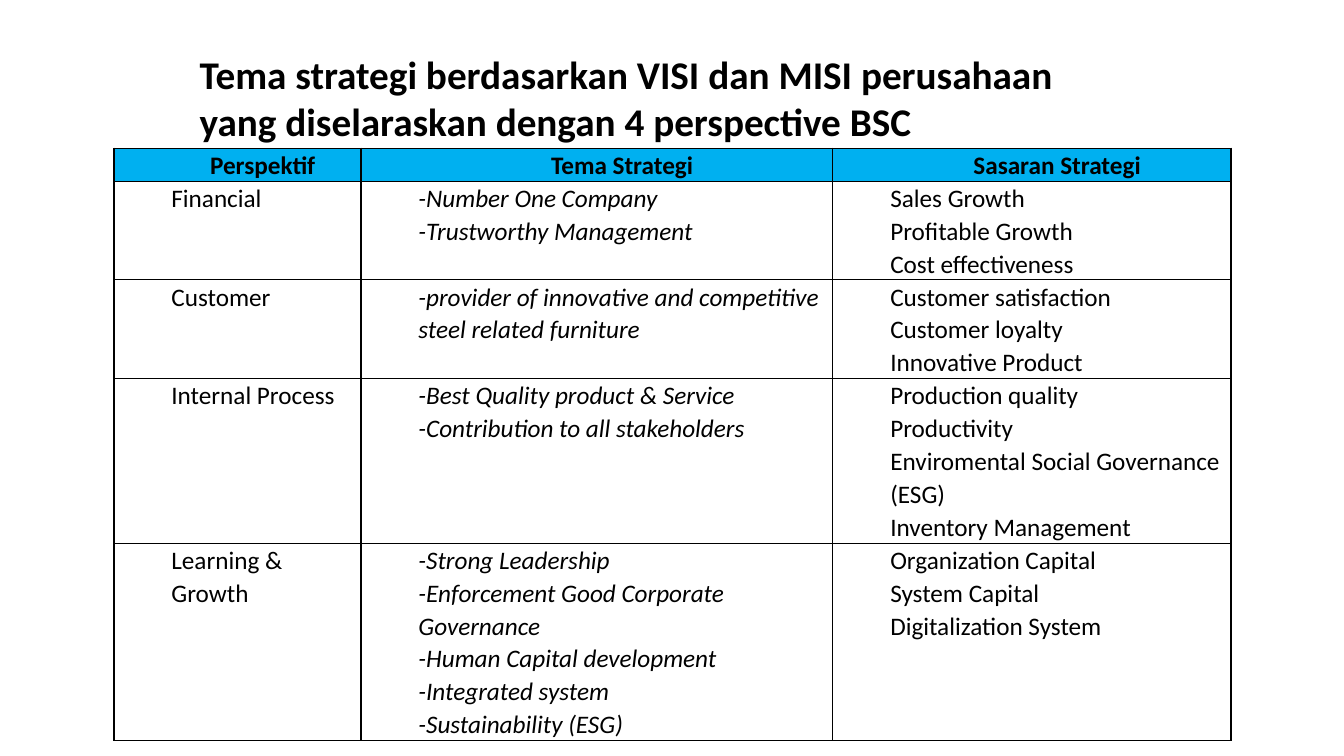
from dataclasses import dataclass

from pptx import Presentation
from pptx.dml.color import RGBColor
from pptx.enum.text import MSO_ANCHOR, MSO_AUTO_SIZE, PP_ALIGN
from pptx.oxml.xmlchemy import OxmlElement
from pptx.slide import Slide
from pptx.table import _Cell
from pptx.text.text import TextFrame
from pptx.util import Inches, Pt

LEFT, CENTER = PP_ALIGN.LEFT, PP_ALIGN.CENTER
TOP = MSO_ANCHOR.TOP
NO_AUTOFIT = MSO_AUTO_SIZE.NONE
TITLE_ONLY = 5

WIDTH, HEIGHT = Inches(13.33), Inches(7.5)
FONT = "Calibri"
BLACK, HEADER_FILL = "000000", "00B0F0"
INDENT, SIDE_MARGIN = Inches(0.5), Inches(0.07)
BORDER = Pt(1)

TITLE = "Tema strategi berdasarkan VISI dan MISI perusahaan yang diselaraskan dengan 4 perspective BSC"
HEADERS = ("Perspektif", "Tema Strategi", "Sasaran Strategi")
COLUMN_WIDTHS = (18.38, 35.11, 29.63)
HEADER_HEIGHT = 3.87


@dataclass(frozen=True)
class Perspective:
    """One row of the strategy table."""

    name: str
    themes: tuple[str, ...]
    goals: tuple[str, ...]
    height: float


PERSPECTIVES = (
    Perspective(
        "Financial",
        ("-Number One Company", "-Trustworthy Management"),
        ("Sales Growth", "Profitable Growth", "Cost effectiveness"),
        12,
    ),
    Perspective(
        "Customer",
        ("-provider of innovative and competitive steel related furniture",),
        ("Customer satisfaction", "Customer loyalty", "Innovative Product"),
        12,
    ),
    Perspective(
        "Internal Process",
        ("-Best Quality product & Service", "-Contribution to all stakeholders"),
        ("Production quality", "Productivity",
         "Enviromental Social Governance (ESG)", "Inventory Management"),
        20.13,
    ),
    Perspective(
        "Learning & Growth",
        ("-Strong Leadership", "-Enforcement Good Corporate Governance",
         "-Human Capital development", "-Integrated system", "-Sustainability (ESG)"),
        ("Organization Capital", "System Capital", "Digitalization System"),
        20.13,
    ),
)


def cols(n: float) -> int:
    """Return a length of n hundredths of the slide width."""
    return round(WIDTH * n / 100)


def rows(n: float) -> int:
    """Return a length of n hundredths of the slide height."""
    return round(HEIGHT * n / 100)


def color(value: str) -> RGBColor:
    """Turn a hex string into a colour."""
    return RGBColor.from_string(value)


def write(tf: TextFrame, lines: tuple[str, ...], *, size: float = 18, bold: bool = False,
          italic: bool = False, align: PP_ALIGN = LEFT, indent: int = 0,
          spacing: float = 1.0) -> None:
    """Write one formatted paragraph per line into a text frame."""
    tf.word_wrap = True
    for i, line in enumerate(lines):
        p = tf.add_paragraph() if i else tf.paragraphs[0]
        p.alignment, p.line_spacing = align, spacing
        pPr = p._p.get_or_add_pPr()
        pPr.set("marL", str(indent))
        pPr.set("indent", "0")
        r = p.add_run()
        r.text = line
        r.font.name, r.font.size = FONT, Pt(size)
        r.font.bold, r.font.italic = bold, italic
        r.font.color.rgb = color(BLACK)


def add_borders(cell: _Cell) -> None:
    """Draw a thin black line on all four sides of a cell."""
    tcPr = cell._tc.get_or_add_tcPr()
    for side in ("L", "R", "T", "B"):
        ln = OxmlElement(f"a:ln{side}")
        ln.set("w", str(BORDER))
        fill = OxmlElement("a:solidFill")
        clr = OxmlElement("a:srgbClr")
        clr.set("val", BLACK)
        fill.append(clr)
        ln.append(fill)
        tcPr.append(ln)


def fill_cell(cell: _Cell, lines: tuple[str, ...], *, header: bool = False,
              italic: bool = False) -> None:
    """Set the margins, borders, fill and text of a cell."""
    cell.margin_left = cell.margin_right = SIDE_MARGIN
    cell.margin_top = cell.margin_bottom = 0
    cell.vertical_anchor = TOP
    add_borders(cell)
    if header:
        cell.fill.solid()
        cell.fill.fore_color.rgb = color(HEADER_FILL)
    else:
        cell.fill.background()
    write(cell.text_frame, lines, bold=header, italic=italic,
          align=CENTER if header else LEFT, indent=INDENT, spacing=1.07)


def add_title(s: Slide) -> None:
    """Place and write the slide title."""
    sp = s.shapes.title
    sp.left, sp.top, sp.width, sp.height = cols(14.1), rows(6), cols(69.32), rows(18.4)
    tf = sp.text_frame
    tf.auto_size, tf.vertical_anchor = NO_AUTOFIT, TOP
    write(tf, (TITLE,), size=28, bold=True)


def add_strategy_table(s: Slide) -> None:
    """Add the table of perspectives, themes and goals."""
    heights = (HEADER_HEIGHT, *(item.height for item in PERSPECTIVES))
    table = s.shapes.add_table(
        len(heights), len(HEADERS), cols(8.48), rows(19.6),
        cols(sum(COLUMN_WIDTHS)), rows(sum(heights)),
    ).table
    table.first_row = table.horz_banding = False
    for column, width in zip(table.columns, COLUMN_WIDTHS):
        column.width = cols(width)
    for row, height in zip(table.rows, heights):
        row.height = rows(height)
    for j, text in enumerate(HEADERS):
        fill_cell(table.cell(0, j), (text,), header=True)
    for i, item in enumerate(PERSPECTIVES, 1):
        fill_cell(table.cell(i, 0), (item.name,))
        fill_cell(table.cell(i, 1), item.themes, italic=True)
        fill_cell(table.cell(i, 2), item.goals)


def main() -> None:
    """Build and save the presentation."""
    prs = Presentation()
    prs.slide_width, prs.slide_height = WIDTH, HEIGHT
    s = prs.slides.add_slide(prs.slide_layouts[TITLE_ONLY])
    add_title(s)
    add_strategy_table(s)
    prs.save("out.pptx")


if __name__ == "__main__":
    main()
